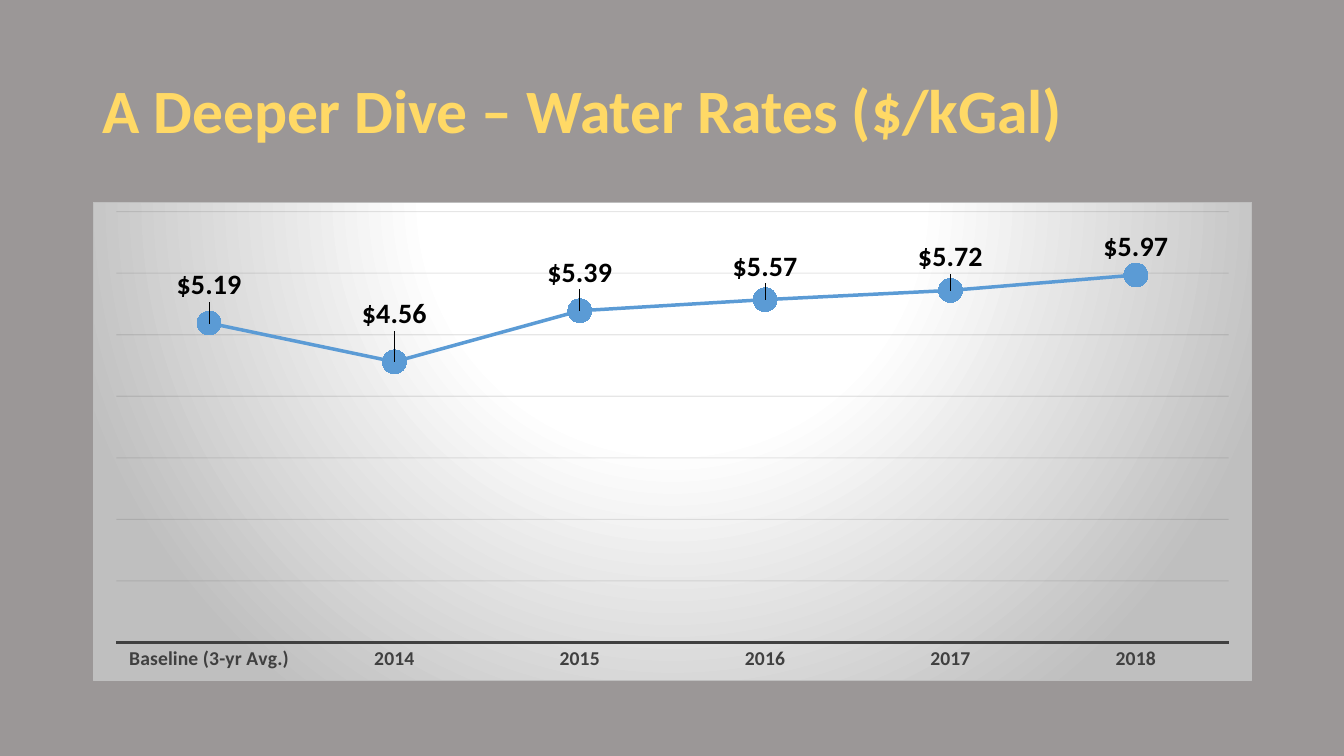
from lxml.etree import SubElement
from pptx import Presentation
from pptx.chart.data import CategoryChartData
from pptx.dml.color import RGBColor
from pptx.enum.chart import (XL_CHART_TYPE, XL_LABEL_POSITION, XL_MARKER_STYLE,
                             XL_TICK_MARK)
from pptx.enum.text import MSO_ANCHOR
from pptx.oxml import parse_xml
from pptx.oxml.ns import nsdecls, qn
from pptx.util import Inches, Pt

COLORS = {"background": "9B9797", "title": "FFD966", "line": "5B9BD5",
          "label": "000000", "axis": "404040", "grid": "0D0D0D",
          "center": "FFFFFF", "edge": "BFBFBF"}
FONT = "Calibri"
MONEY = '"$"#,##0.00'
# Category, rate, upward shift of its label as a share of the chart height
RATES = [("Baseline (3-yr Avg.)", 5.19, 0.08), ("2014", 4.56, 0.1),
         ("2015", 5.39, 0.08), ("2016", 5.57, 0.07),
         ("2017", 5.72, 0.07), ("2018", 5.97, 0.06)]


def rgb(name):
    return RGBColor.from_string(COLORS[name])


def manual_layout(**values):
    items = "".join(f'<c:{k} val="{v}"/>' for k, v in values.items())
    return parse_xml(f'<c:layout {nsdecls("c")}><c:manualLayout>{items}'
                     '</c:manualLayout></c:layout>')


class RateSlide:
    def __init__(self, prs):
        self.s = prs.slides.add_slide(prs.slide_layouts[6])
        fill = self.s.background.fill
        fill.solid()
        fill.fore_color.rgb = rgb("background")

    def font(self, font, size, color):
        font.name, font.size, font.bold = FONT, Pt(size), True
        font.color.rgb = rgb(color)

    def title(self, text, left, top, width, height):
        tf = self.s.shapes.add_textbox(Inches(left), Inches(top),
                                       Inches(width), Inches(height)).text_frame
        tf.word_wrap = True
        tf.vertical_anchor = MSO_ANCHOR.MIDDLE
        p = tf.paragraphs[0]
        p.text = text
        p.line_spacing = 0.9
        self.font(p.font, 44, "title")

    def line_chart(self, left, top, width, height):
        data = CategoryChartData(number_format=MONEY)
        data.categories = [name for name, _, _ in RATES]
        data.add_series("Series 1", [rate for _, rate, _ in RATES])
        chart = self.s.shapes.add_chart(
            XL_CHART_TYPE.LINE_MARKERS, Inches(left), Inches(top),
            Inches(width), Inches(height), data).chart
        chart.has_legend = chart.has_title = False
        chart.font.name, chart.font.size = FONT, Pt(10)
        self.backdrop(chart)
        self.axes(chart)
        self.series(chart.plots[0])

    def backdrop(self, chart):
        stops = "".join(
            f'<a:gs pos="{pos * 1000}"><a:srgbClr val="{COLORS[name]}"/></a:gs>'
            for pos, name in ((0, "center"), (39, "center"), (100, "edge")))
        sp_pr = parse_xml(
            f'<c:spPr {nsdecls("c", "a")}><a:gradFill><a:gsLst>{stops}</a:gsLst>'
            '<a:path path="circle"><a:fillToRect l="50000" t="-80000" r="50000"'
            ' b="180000"/></a:path></a:gradFill><a:ln w="9525"><a:solidFill>'
            f'<a:srgbClr val="{COLORS["edge"]}"/></a:solidFill></a:ln></c:spPr>')
        space = chart._chartSpace
        space.find(qn("c:chart")).addnext(sp_pr)
        # Inner plot area, as shares of the chart
        plot_area = space.find(".//" + qn("c:plotArea"))
        for old in plot_area.findall(qn("c:layout")):
            plot_area.remove(old)
        plot_area.insert(0, manual_layout(
            layoutTarget="inner", xMode="edge", yMode="edge",
            x=0.02, y=0.02, w=0.96, h=0.9))

    def axes(self, chart):
        cat, val = chart.category_axis, chart.value_axis
        cat.major_tick_mark = cat.minor_tick_mark = XL_TICK_MARK.NONE
        cat.format.line.color.rgb = rgb("axis")
        cat.format.line.width = Pt(1.5)
        self.font(cat.tick_labels.font, 14, "axis")
        val.visible = False
        val.minimum_scale, val.maximum_scale, val.major_unit = 0, 7, 1
        val.has_major_gridlines = True
        grid = val.major_gridlines.format.line
        grid.color.rgb = rgb("grid")
        grid.width = Pt(0.75)
        clr = val.major_gridlines._xAx.find(
            qn("c:majorGridlines")).find(".//" + qn("a:srgbClr"))
        SubElement(clr, qn("a:alpha")).set("val", "10000")

    def series(self, plot):
        plot.vary_by_categories = False
        rates = plot.series[0]
        rates.smooth = False
        rates.format.line.color.rgb = rgb("line")
        rates.format.line.width = Pt(2.5)
        marker = rates.marker
        marker.style, marker.size = XL_MARKER_STYLE.CIRCLE, 17
        marker.format.fill.solid()
        marker.format.fill.fore_color.rgb = rgb("line")
        marker.format.line.color.rgb = rgb("line")
        # Value labels, each lifted above its marker
        labels = rates.data_labels
        labels.show_value = True
        labels.number_format, labels.number_format_is_linked = MONEY, False
        labels.position = XL_LABEL_POSITION.CENTER
        self.font(labels.font, 20, "label")
        for i, (_, _, lift) in enumerate(RATES):
            label = rates.points[i].data_label
            self.font(label.font, 20, "label")
            label.position = XL_LABEL_POSITION.CENTER
        for d_lbl, (_, _, lift) in zip(
                rates._element.iter(qn("c:dLbl")), RATES):
            d_lbl.find(qn("c:idx")).addnext(manual_layout(x=0, y=-lift))


prs = Presentation()
prs.slide_width, prs.slide_height = Inches(13.33), Inches(7.5)
slide = RateSlide(prs)
slide.title("A Deeper Dive – Water Rates ($/kGal)", 0.92, 0.4, 11.5, 1.45)
slide.line_chart(0.92, 2, 11.5, 4.76)
prs.save("out.pptx")
